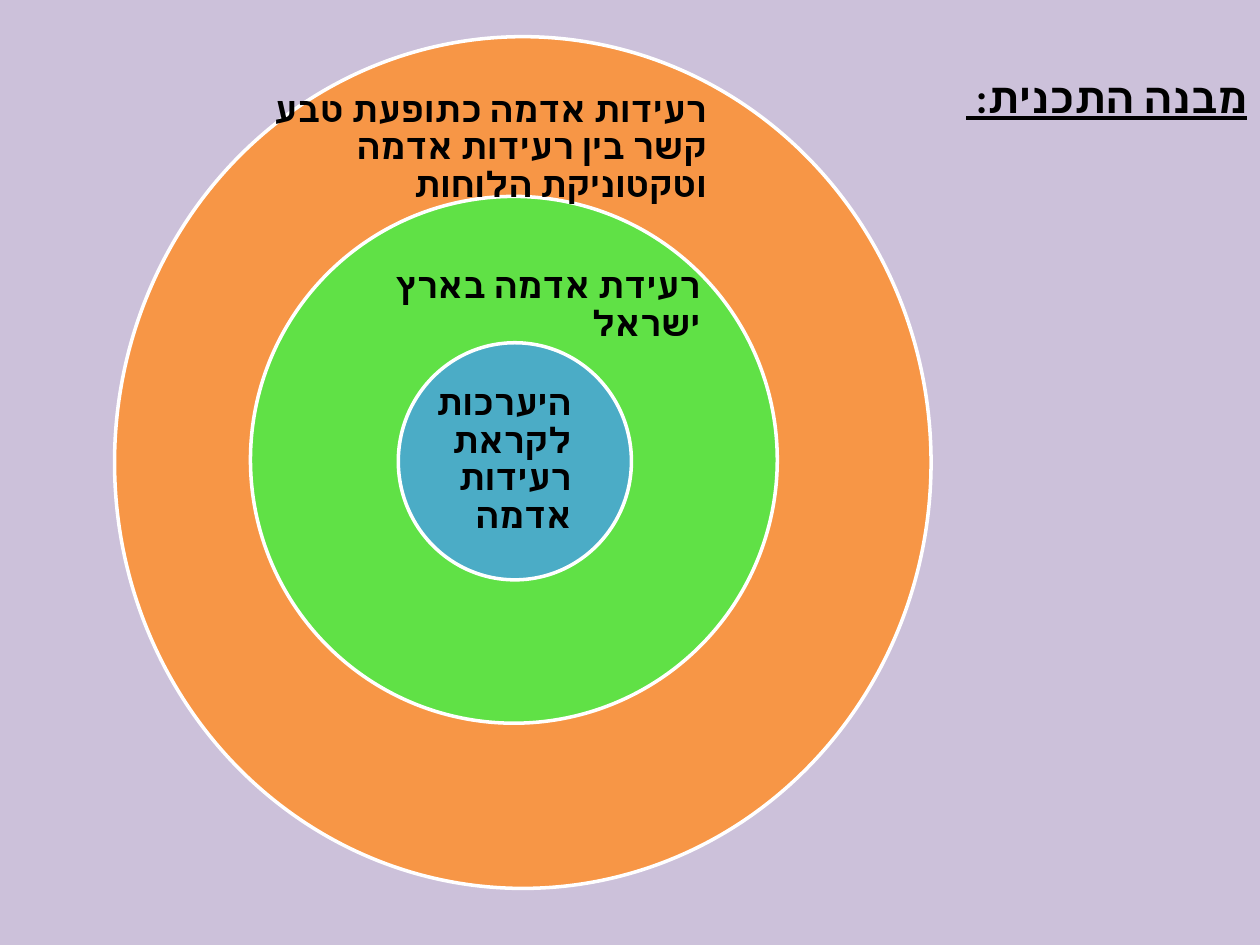
from lxml import etree
from pptx import Presentation
from pptx.dml.color import RGBColor
from pptx.enum.shapes import MSO_SHAPE
from pptx.enum.text import MSO_ANCHOR, MSO_AUTO_SIZE, PP_ALIGN
from pptx.oxml.ns import qn
from pptx.util import Cm, Pt

OVAL = MSO_SHAPE.OVAL
TOP, MIDDLE = MSO_ANCHOR.TOP, MSO_ANCHOR.MIDDLE
GROW = MSO_AUTO_SIZE.SHAPE_TO_FIT_TEXT
RIGHT = PP_ALIGN.RIGHT

LILAC = RGBColor(0xCC, 0xC1, 0xDA)
ORANGE = RGBColor(0xF7, 0x96, 0x46)
GREEN = RGBColor(0x60, 0xE1, 0x46)
BLUE = RGBColor(0x4B, 0xAC, 0xC6)
WHITE = RGBColor(0xFF, 0xFF, 0xFF)
BLACK = RGBColor(0x00, 0x00, 0x00)
FONT = "Calibri"

CIRCLES = [
    ((2.31, 0.74, 16.46, 17.17), ORANGE),
    ((5.05, 3.96, 10.62, 10.62), GREEN),
    ((8.03, 6.91, 4.7, 4.78), BLUE),
]
LABELS = [
    ((7.49, 6.96, 4.11, 4.65), "היערכות לקראת רעידות אדמה"),
    ((5.64, 3.89, 8.56, 4.57), "רעידת אדמה בארץ ישראל"),
    ((4.75, 1.32, 9.58, 3.35),
     "רעידות אדמה כתופעת טבע קשר בין רעידות אדמה וטקטוניקת הלוחות"),
]


def write_hebrew(frame, text, size):
    """Fill a text frame with one bold right-to-left paragraph."""
    frame.word_wrap = True
    para = frame.paragraphs[0]
    para.text = text
    para.alignment = RIGHT
    font = para.font
    font.name, font.size, font.bold = FONT, Pt(size), True
    font.color.rgb = BLACK
    properties = para._p.get_or_add_pPr()
    properties.set("rtl", "1")
    etree.SubElement(properties.find(qn("a:defRPr")), qn("a:cs"), typeface=FONT)
    return para


def add_circle(group, bounds, color):
    """Add one ring of the diagram."""
    circle = group.shapes.add_shape(OVAL, *map(Cm, bounds))
    circle.shadow.inherit = False
    circle.fill.solid()
    circle.fill.fore_color.rgb = color
    circle.line.color.rgb = WHITE
    circle.line.width = Pt(2)


def add_label(group, bounds, text):
    """Add the label of one ring."""
    frame = group.shapes.add_textbox(*map(Cm, bounds)).text_frame
    frame.vertical_anchor = MIDDLE
    frame.margin_left = Cm(0.41)
    frame.margin_top = frame.margin_right = frame.margin_bottom = Cm(0.08)
    para = write_hebrew(frame, text, 20)
    para.line_spacing = 0.9
    para.space_after = Pt(7)


def set_title(title, bounds, text):
    """Place and format the slide title."""
    title.left, title.top, title.width, title.height = map(Cm, bounds)
    frame = title.text_frame
    frame.vertical_anchor = TOP
    frame.auto_size = GROW
    write_hebrew(frame, text, 24).font.underline = True


def main():
    """Build the slide and save the deck."""
    deck = Presentation()
    deck.slide_width, deck.slide_height = Cm(25.4), Cm(19.05)
    page = deck.slides.add_slide(deck.slide_layouts[5])
    page.background.fill.solid()
    page.background.fill.fore_color.rgb = LILAC
    diagram = page.shapes.add_group_shape()
    for bounds, color in CIRCLES:
        add_circle(diagram, bounds, color)
    for bounds, text in LABELS:
        add_label(diagram, bounds, text)
    set_title(page.shapes.title, (19.1, 1.32, 6.3, 1.27), "מבנה התכנית: ")
    deck.save("out.pptx")


if __name__ == "__main__":
    main()
